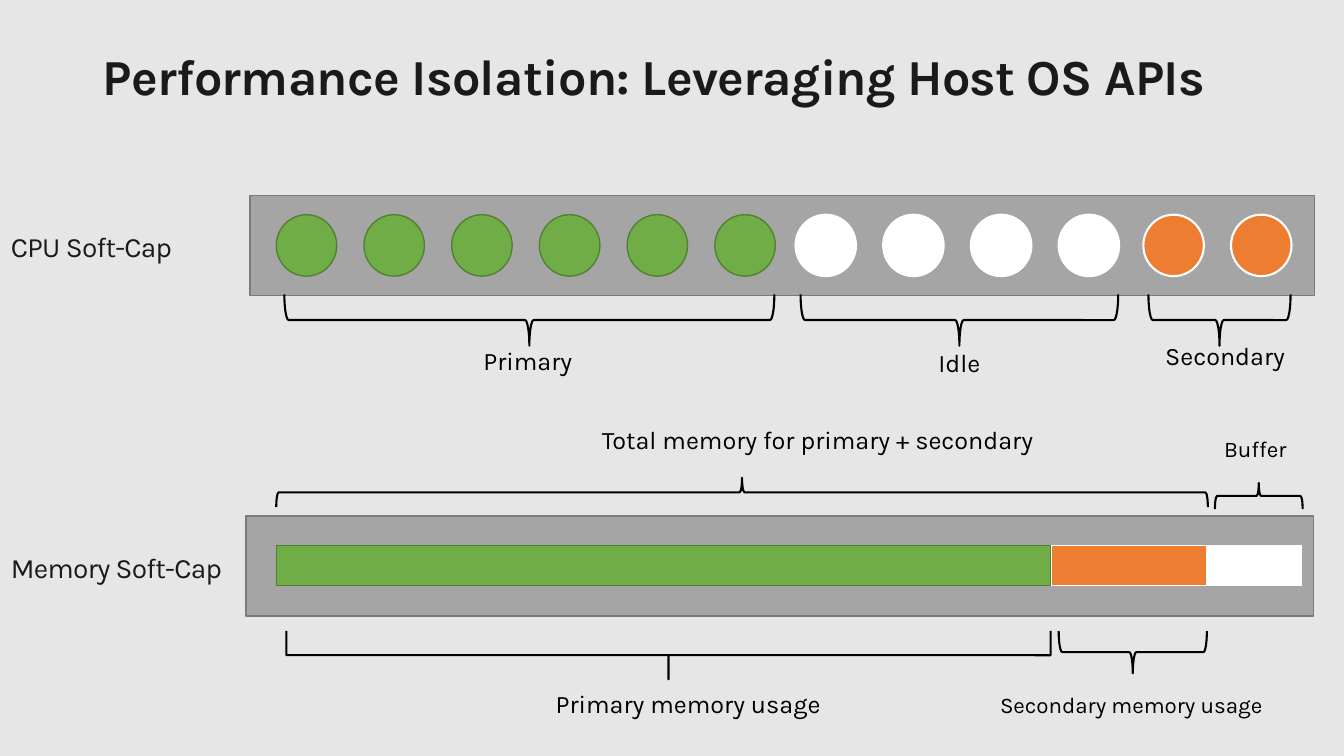
from pptx import Presentation
from pptx.dml.color import RGBColor
from pptx.enum import shapes, text
from pptx.util import Inches, Pt

SHAPE = shapes.MSO_SHAPE
GREEN, ORANGE, WHITE, GRAY = "70AD47", "ED7D31", "FFFFFF", "A5A5A5"
BLACK, INK = "000000", "1A1A1A"
DARK_GREEN, MEMORY_GREEN, DARK_GRAY = "538035", "507E32", "7A7A7A"
CIRCLE_PITCH = 0.87


def color(value):
    return RGBColor.from_string(value)


def add_block(slide, kind, box, fill, line, width=1):
    block = slide.shapes.add_shape(kind, *map(Inches, box))
    block.shadow.inherit = False
    if fill:
        block.fill.solid()
        block.fill.fore_color.rgb = color(fill)
    else:
        block.fill.background()
    block.line.color.rgb = color(line)
    block.line.width = Pt(width)
    return block


def add_cores(slide, left, count, fill, line, width):
    for index in range(count):
        box = (left + index * CIRCLE_PITCH, 2.13, 0.6, 0.61)
        add_block(slide, SHAPE.OVAL, box, fill, line, width)


def add_brace(slide, left, top, length, depth, rotation):
    box = (left + (length - depth) / 2, top + (depth - length) / 2, depth, length)
    brace = add_block(slide, SHAPE.RIGHT_BRACE, box, None, BLACK, 1.5)
    brace.rotation = rotation
    return brace


def add_text(slide, words, box, size, ink, bold=False, spacing=None, **layout):
    frame = slide.shapes.add_textbox(*map(Inches, box)).text_frame
    alignment = layout.pop("alignment", text.PP_ALIGN.LEFT)
    for name, value in {"word_wrap": True, **layout}.items():
        setattr(frame, name, value)
    paragraph = frame.paragraphs[0]
    paragraph.alignment = alignment
    run = paragraph.add_run()
    run.text = words
    for name, value in {"name": "Karla", "size": Pt(size), "bold": bold}.items():
        setattr(run.font, name, value)
    run.font.color.rgb = color(ink)
    if spacing is not None:
        run.font._element.set("spc", str(spacing))


def add_label(slide, words, left, top, width, size=18):
    height = 0.4 if size == 18 else 0.37
    add_text(slide, words, (left, top, width, height), size, BLACK,
             alignment=text.PP_ALIGN.CENTER,
             auto_size=text.MSO_AUTO_SIZE.SHAPE_TO_FIT_TEXT)


def add_row_name(slide, words, top, width):
    add_text(slide, words, (0.01, top, width, 1.44), 20, INK, spacing=-50,
             vertical_anchor=text.MSO_ANCHOR.MIDDLE)


def add_cpu_row(slide):
    add_block(slide, SHAPE.RECTANGLE, (2.48, 1.94, 10.56, 0.99), GRAY, DARK_GRAY)
    add_cores(slide, 2.74, 6, GREEN, DARK_GREEN, 1)
    add_cores(slide, 7.89, 4, WHITE, WHITE, 1.5)
    add_cores(slide, 11.34, 2, ORANGE, WHITE, 1.5)
    for left, length in ((2.82, 4.86), (7.94, 3.15), (11.39, 1.41)):
        add_brace(slide, left, 2.92, length, 0.51, 90)
    add_label(slide, "Primary", 4.4, 3.38, 1.67)
    add_label(slide, "Idle", 8.81, 3.4, 1.41)
    add_label(slide, "Secondary", 11.34, 3.33, 1.62)
    add_row_name(slide, "CPU Soft-Cap", 1.72, 2.47)


def add_memory_row(slide):
    add_block(slide, SHAPE.RECTANGLE, (2.44, 5.12, 10.59, 0.99), GRAY, DARK_GRAY)
    for left, width, fill, line in (
        (2.74, 7.68, GREEN, MEMORY_GREEN),
        (11.97, 0.94, WHITE, WHITE),
        (10.43, 1.54, ORANGE, WHITE),
    ):
        add_block(slide, SHAPE.RECTANGLE, (left, 5.41, width, 0.4), fill, line)
    primary_usage = add_brace(slide, 2.84, 6.26, 7.58, 0.48, 90)
    primary_usage.adjustments[0] = 0
    add_brace(slide, 10.5, 6.26, 1.47, 0.42, 90)
    add_brace(slide, 2.74, 4.74, 9.24, 0.29, 270)
    add_brace(slide, 12.05, 4.79, 0.87, 0.26, 270)
    add_label(slide, "Primary memory usage", 5.1, 6.78, 3.45)
    add_label(slide, "Secondary memory usage", 9.66, 6.81, 3.12, 16)
    add_label(slide, "Total memory for primary + secondary", 5.53, 4.16, 5.16)
    add_label(slide, "Buffer", 11.65, 4.27, 1.6, 16)
    add_row_name(slide, "Memory Soft-Cap", 4.91, 2.44)


def main():
    deck = Presentation()
    deck.slide_width, deck.slide_height = Inches(13.33), Inches(7.5)
    slide = deck.slides.add_slide(deck.slide_layouts[6])
    slide.background.fill.solid()
    slide.background.fill.fore_color.rgb = color("E6E6E6")
    add_cpu_row(slide)
    add_memory_row(slide)
    add_text(slide, "Performance Isolation: Leveraging Host OS APIs",
             (0.92, 0.4, 11.5, 1.45), 36, INK, bold=True, spacing=-50)
    deck.save("out.pptx")


if __name__ == "__main__":
    main()
